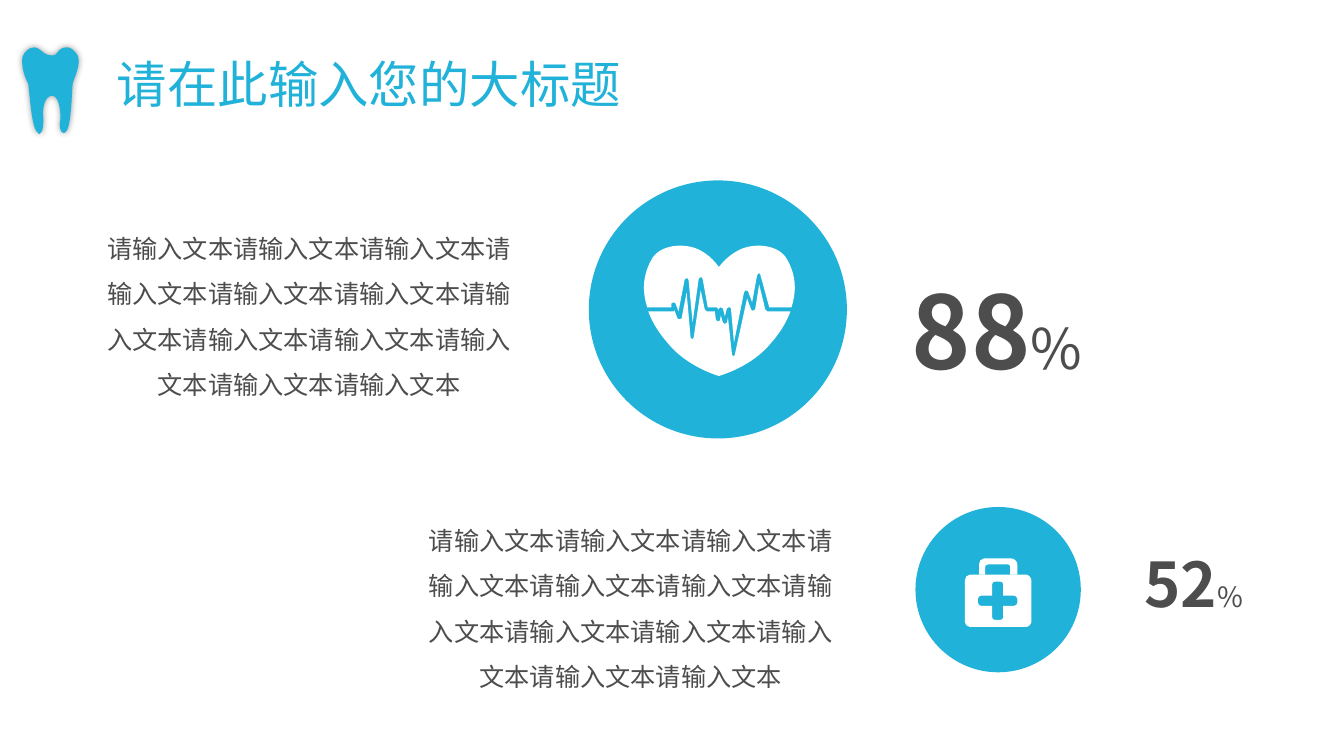
import pptx
import pptx.dml.color
import pptx.enum.shapes
import pptx.enum.text
import pptx.oxml
import pptx.oxml.ns
import pptx.util
from lxml import etree

PX = 9144  # EMU in one px, 100 px to the inch
FONT = "Noto Sans CJK SC"
BLUE = pptx.dml.color.RGBColor(0x21, 0xB2, 0xD9)
WHITE = pptx.dml.color.RGBColor(0xFF, 0xFF, 0xFF)
GREY = pptx.dml.color.RGBColor(0x4D, 0x4D, 0x4D)
TOP = pptx.enum.text.MSO_ANCHOR.TOP
MIDDLE = pptx.enum.text.MSO_ANCHOR.MIDDLE
LEFT = pptx.enum.text.PP_ALIGN.LEFT
CENTER = pptx.enum.text.PP_ALIGN.CENTER
FIXED = pptx.enum.text.MSO_AUTO_SIZE.NONE
GROW = pptx.enum.text.MSO_AUTO_SIZE.SHAPE_TO_FIT_TEXT


def draw_outline(shapes, contours, color):
    """Draw closed contours whose items are points (x, y) or cubic curves (x1, y1, x2, y2, x, y)."""
    first_x, first_y = contours[0][0]
    builder = shapes.build_freeform(first_x, first_y, scale=PX)
    for number, (start, *segments) in enumerate(contours):
        if number:
            builder.move_to(*start)
        builder.add_line_segments([segment[-2:] for segment in segments], close=False)
        builder.add_line_segments([], close=True)
    outline = builder.convert_to_shape()
    outline.shadow.inherit = False
    outline.fill.solid()
    outline.fill.fore_color.rgb = color
    outline.line.fill.background()

    # Bend the straight pieces that have control points
    origin = [min(node[axis - 2] for contour in contours for node in contour) for axis in (0, 1)]
    pieces = list(outline._element.iter(pptx.oxml.ns.qn("a:lnTo")))
    segments = [segment for contour in contours for segment in contour[1:]]
    for piece, segment in zip(pieces, segments):
        if len(segment) == 6:
            curve = etree.Element(pptx.oxml.ns.qn("a:cubicBezTo"))
            for x, y in zip(segment[::2], segment[1::2]):
                etree.SubElement(curve, pptx.oxml.ns.qn("a:pt"),
                                 x=str(x - origin[0]), y=str(y - origin[1]))
            piece.getparent().replace(piece, curve)
    return outline


deck = pptx.Presentation()
deck.slide_width, deck.slide_height = 1333 * PX, 750 * PX
page = deck.slides.add_slide(deck.slide_layouts[6])

# Tooth beside the title
tooth = [
    (63, 132), (64, 132), (71, 130, 71, 92, 72, 84), (72, 80, 81, 65, 77, 55),
    (74, 50, 70, 47, 67, 47), (66, 47), (62, 47, 59, 49, 57, 52),
    (55, 55, 53, 55, 52, 55), (51, 55), (46, 55, 43, 52, 43, 52),
    (41, 51, 38, 47, 34, 47), (31, 47, 28, 48, 24, 53), (22, 55, 22, 58, 22, 62),
    (22, 70, 26, 80, 28, 83), (29, 89, 31, 123, 36, 130), (38, 132, 38, 133, 39, 133),
    (40, 133, 40, 133, 40, 132), (43, 131, 43, 122, 43, 117), (42, 111, 43, 95, 52, 95),
    (59, 96, 60, 111, 60, 118), (58, 125, 60, 132, 63, 132),
]
tooth_shape = draw_outline(page.shapes, [tooth], BLUE)
effects = tooth_shape._element.spPr.find(pptx.oxml.ns.qn("a:effectLst"))
effects.append(pptx.oxml.parse_xml(
    '<a:outerShdw xmlns:a="http://schemas.openxmlformats.org/drawingml/2006/main" '
    'blurRad="63500" dist="0" dir="0" algn="ctr" rotWithShape="0">'
    '<a:srgbClr val="000000"><a:alpha val="40000"/></a:srgbClr></a:outerShdw>'))

# Heart, split by the pulse line
heart_top = [
    (643, 305), (666, 305), (666, 301), (667, 300, 669, 299, 670, 301), (673, 309),
    (679, 278), (679, 276, 683, 275, 683, 278), (687, 320),
    (693, 277), (693, 275, 697, 274, 697, 277), (702, 305),
    (711, 305), (713, 307), (713, 308), (713, 306), (713, 305, 716, 304, 717, 306), (719, 314),
    (721, 306), (722, 304, 725, 304, 725, 306), (728, 340),
    (738, 290), (738, 288, 741, 287, 742, 289), (746, 300),
    (751, 273), (751, 271, 754, 270, 754, 272), (763, 305), (785, 305),
    (790, 290, 790, 274, 781, 258), (774, 244, 753, 241, 738, 246), (723, 251, 713, 265, 713, 265),
    (713, 265, 704, 251, 689, 246), (674, 241, 653, 244, 646, 258), (637, 274, 637, 290, 642, 305),
]
heart_bottom = [
    (761, 309), (759, 307), (753, 282), (749, 307), (748, 309, 745, 309, 745, 307), (741, 296),
    (729, 351), (729, 354, 726, 354, 726, 351), (722, 315),
    (721, 320), (720, 322, 718, 322, 717, 320), (715, 313),
    (714, 318), (713, 320, 710, 319, 710, 317), (709, 309), (701, 309), (699, 307), (695, 288),
    (688, 335), (688, 337, 685, 337, 685, 335), (681, 290),
    (676, 316), (675, 317, 673, 317, 672, 316), (669, 308), (668, 309), (643, 309),
    (647, 320, 654, 331, 662, 340), (681, 364, 713, 373, 713, 373),
    (713, 373, 746, 364, 765, 340), (773, 331, 780, 320, 784, 309),
]

# First aid case, with the cross cut out
case_handle = [
    (977, 570), (977, 563), (977, 561, 978, 560, 980, 560), (1000, 560),
    (1001, 560, 1002, 561, 1002, 563), (1002, 570), (1009, 570), (1009, 560),
    (1009, 557, 1006, 554, 1003, 554), (976, 554), (973, 554, 971, 557, 971, 560), (971, 570),
]
case_body = [
    (1018, 570), (962, 570), (959, 570, 957, 573, 957, 576), (957, 617),
    (957, 619, 959, 622, 962, 622), (1018, 622), (1020, 622, 1023, 619, 1023, 617),
    (1023, 576), (1023, 573, 1020, 570, 1018, 570),
]
cross = [
    (1009, 598), (1009, 600, 1007, 601, 1006, 601), (995, 601), (995, 612),
    (995, 614, 994, 615, 992, 615), (987, 615), (985, 615, 984, 614, 984, 612), (984, 601),
    (973, 601), (972, 601, 970, 600, 970, 598), (970, 594), (970, 592, 972, 591, 973, 591),
    (984, 591), (984, 580), (984, 578, 985, 577, 987, 577), (992, 577),
    (994, 577, 995, 578, 995, 580), (995, 591), (1006, 591), (1007, 591, 1009, 592, 1009, 594),
]

badges = [
    (584, 179, 256, [[heart_top], [heart_bottom]]),
    (908, 503, 164, [[case_handle], [case_body, cross]]),
]
for left, top, size, icon_parts in badges:
    badge = page.shapes.add_group_shape()
    disc = badge.shapes.add_shape(pptx.enum.shapes.MSO_SHAPE.OVAL,
                                  left * PX, top * PX, size * PX, size * PX)
    disc.shadow.inherit = False
    disc.fill.solid()
    disc.fill.fore_color.rgb = BLUE
    disc.line.fill.background()
    for contours in icon_parts:
        draw_outline(badge.shapes, contours, WHITE)

# Texts: place, frame format, paragraph format, colour, spans of (text, size, bold)
body = "请输入文本" * 12
number_frame = {"auto_size": GROW, "vertical_anchor": TOP}
text_frame = {"auto_size": FIXED, "vertical_anchor": MIDDLE}
number_format = {"alignment": CENTER}
title_format = {"alignment": LEFT, "line_spacing": 0.9}
body_format = {"alignment": CENTER, "line_spacing": 1.5}
texts = [
    ((106, 40, 1145, 93), text_frame, title_format, BLUE, [("请在此输入您的大标题", 36, False)]),
    ((861, 262, 256, 131), number_frame, number_format, GREY, [("88", 72, True), ("%", 40, False)]),
    ((1085, 537, 198, 84), number_frame, number_format, GREY, [("52", 44, True), ("%", 20, False)]),
    ((85, 210, 443, 193), text_frame, body_format, GREY, [(body, 18, False)]),
    ((404, 499, 443, 194), text_frame, body_format, GREY, [(body, 18, False)]),
]
for place, frame_format, para_format, color, spans in texts:
    box = page.shapes.add_textbox(*(length * PX for length in place))
    frame = box.text_frame
    frame.word_wrap = True
    for name, value in frame_format.items():
        setattr(frame, name, value)
    para = frame.paragraphs[0]
    for name, value in para_format.items():
        setattr(para, name, value)
    for words, size, bold in spans:
        span = para.add_run()
        span.text = words
        for name, value in {"name": FONT, "size": pptx.util.Pt(size), "bold": bold}.items():
            setattr(span.font, name, value)
        span.font.color.rgb = color
        etree.SubElement(span._r.get_or_add_rPr(), pptx.oxml.ns.qn("a:ea"), typeface=FONT)

deck.save("out.pptx")
